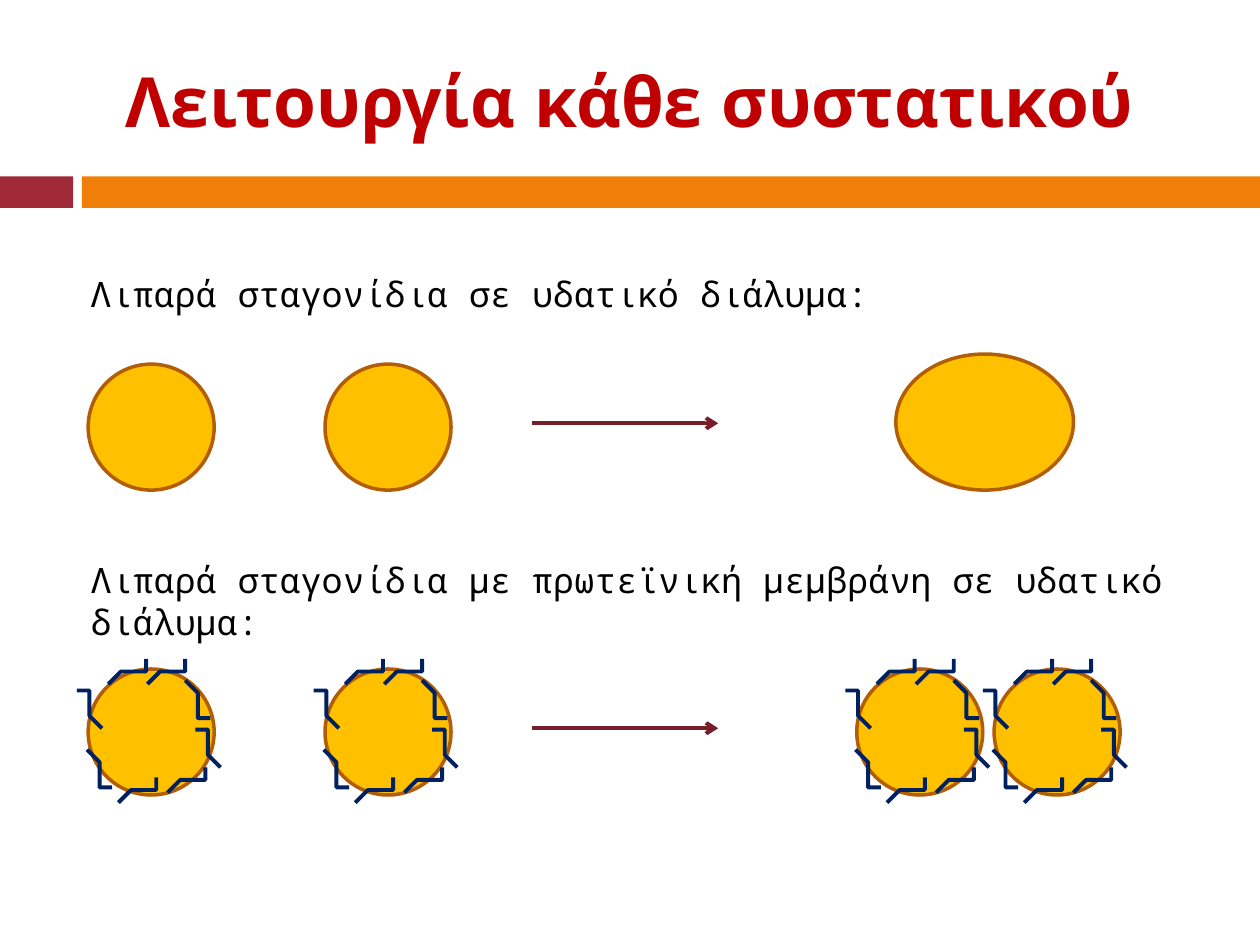
from lxml import etree
from pptx import Presentation
from pptx.dml.color import RGBColor
from pptx.enum.shapes import MSO_CONNECTOR, MSO_SHAPE
from pptx.enum.text import MSO_ANCHOR, PP_ALIGN
from pptx.oxml.ns import qn
from pptx.util import Inches, Pt

RECTANGLE, OVAL = MSO_SHAPE.RECTANGLE, MSO_SHAPE.OVAL
ELBOW = MSO_CONNECTOR.ELBOW
MIDDLE, CENTER, LEFT = MSO_ANCHOR.MIDDLE, PP_ALIGN.CENTER, PP_ALIGN.LEFT

CRIMSON = RGBColor(0x9F, 0x29, 0x36)
ORANGE = RGBColor(0xF0, 0x7F, 0x09)
RED = RGBColor(0xC0, 0x00, 0x00)
BLACK = RGBColor(0x00, 0x00, 0x00)
FAT_YELLOW = RGBColor(0xFF, 0xC0, 0x00)
FAT_BROWN = RGBColor(0xB2, 0x5E, 0x07)
PROTEIN_NAVY = RGBColor(0x00, 0x20, 0x60)
ARROW_MAROON = RGBColor(0x77, 0x1F, 0x28)

COLUMNS, ROWS = 100, 75
CELL = Inches(10) // COLUMNS
DROPLET_SIZE = 10
DROPLET_COLUMNS = (7, 25.8)
MERGING_COLUMNS = (78.9, 68)
ARROW_COLUMNS = (42.2, 57)

STRAND_START = (0, 2.2)
STRAND_POINTS = (
    (0.41, 1.58), (0.66, 1.27), (0.9, 1.1), (1.4, 1), (1.97, 1.18),
    (2.4, 1.25), (2.8, 1.1), (3.1, 0.8), (3.2, 0.4), (3.4, 0),
)
STRAND_PLACES = (
    (4.7, -0.8, 0), (-0.6, 6.9, 90), (2.4, 8.6, 0), (1.6, -0.8, 0),
    (6.3, 7.8, 0), (7.2, 1.4, 90), (-1.4, 2.2, 270), (8, 5.3, 270),
)


def cells(*counts):
    """Turn counts of grid cells into slide lengths."""
    return [round(count * CELL) for count in counts]


def add_filled(shapes, kind, box, fill, line=None):
    """Add a flat preset shape in a box of grid cells."""
    shape = shapes.add_shape(kind, *cells(*box))
    shape.shadow.inherit = False
    shape.fill.solid()
    shape.fill.fore_color.rgb = fill
    if line is None:
        shape.line.fill.background()
    else:
        shape.line.color.rgb = line
        shape.line.width = Pt(2)


def add_fat(shapes, box):
    """Add a fat droplet that fills the box."""
    add_filled(shapes, OVAL, box, FAT_YELLOW, FAT_BROWN)


def add_strand(shapes, left, top, rotation):
    """Add one wavy protein strand."""
    builder = shapes.build_freeform(*STRAND_START, scale=CELL)
    builder.add_line_segments(STRAND_POINTS, close=False)
    strand = builder.convert_to_shape(*cells(left, top))
    strand.rotation = rotation
    strand.shadow.inherit = False
    strand.fill.background()
    strand.line.color.rgb = PROTEIN_NAVY
    strand.line.width = Pt(2.25)


def add_coated_droplet(slide, left, top):
    """Group a droplet with the protein strands around it."""
    group = slide.shapes.add_group_shape()
    add_fat(group.shapes, (left, top, DROPLET_SIZE, DROPLET_SIZE))
    for across, down, rotation in STRAND_PLACES:
        add_strand(group.shapes, left + across, top + down, rotation)


def add_arrow(slide, row):
    """Add the process arrow along a row."""
    start, end = ARROW_COLUMNS
    arrow = slide.shapes.add_connector(ELBOW, *cells(start, row, end, row))
    arrow.line.color.rgb = ARROW_MAROON
    arrow.line.width = Pt(2.25)
    properties = arrow._element.spPr
    etree.SubElement(properties.find(qn("a:ln")), qn("a:tailEnd"), type="arrow")
    etree.SubElement(properties, qn("a:effectLst"))


def format_text(shape, text, font_name, size, color, bold, alignment):
    """Write one paragraph and set its font."""
    shape.text_frame.word_wrap = True
    shape.text_frame.text = text
    paragraph = shape.text_frame.paragraphs[0]
    paragraph.alignment = alignment
    font = paragraph.font
    font.name, font.size, font.bold = font_name, Pt(size), bold
    font.color.rgb = color


def add_caption(slide, box, text):
    """Add the caption above a row of droplets."""
    caption = slide.shapes.add_textbox(*cells(*box))
    format_text(caption, text, "Noto Sans Mono", 20, BLACK, False, LEFT)


def add_header(slide, box, band_top):
    """Place the title and the two-colour band below it."""
    title = slide.shapes.title
    title.left, title.top, title.width, title.height = cells(*box)
    format_text(title, "Λειτουργία κάθε συστατικού", "Montserrat", 39.6, RED, True, CENTER)
    title.text_frame.vertical_anchor = MIDDLE
    add_filled(slide.shapes, RECTANGLE, (0, band_top, 5.8, 2.5), CRIMSON)
    add_filled(slide.shapes, RECTANGLE, (6.5, band_top, COLUMNS - 6.5, 2.5), ORANGE)


def add_plain_row(slide, top):
    """Show two bare droplets merging into a larger one."""
    for left in DROPLET_COLUMNS:
        add_fat(slide.shapes, (left, top, DROPLET_SIZE, DROPLET_SIZE))
    add_arrow(slide, top + 4.7)
    add_fat(slide.shapes, (71.1, top - 0.8, 14.1, 10.8))


def add_coated_row(slide, top):
    """Show two coated droplets that touch but stay apart."""
    for left in DROPLET_COLUMNS + MERGING_COLUMNS:
        add_coated_droplet(slide, left, top)
    add_arrow(slide, top + 4.7)


def main():
    """Build the slide and save it."""
    presentation = Presentation()
    presentation.slide_width, presentation.slide_height = cells(COLUMNS, ROWS)
    slide = presentation.slides.add_slide(presentation.slide_layouts[5])
    add_header(slide, (5.4, 2.5, 89.2, 10.8), 14)
    add_plain_row(slide, 28.9)
    add_coated_row(slide, 53.1)
    add_caption(slide, (6.2, 21.1, 65.6, 4.4), "Λιπαρά σταγονίδια σε υδατικό διάλυμα:")
    add_caption(
        slide, (6.2, 43.8, 87.5, 7.7),
        "Λιπαρά σταγονίδια με πρωτεϊνική μεμβράνη σε υδατικό διάλυμα:",
    )
    presentation.save("out.pptx")


if __name__ == "__main__":
    main()
